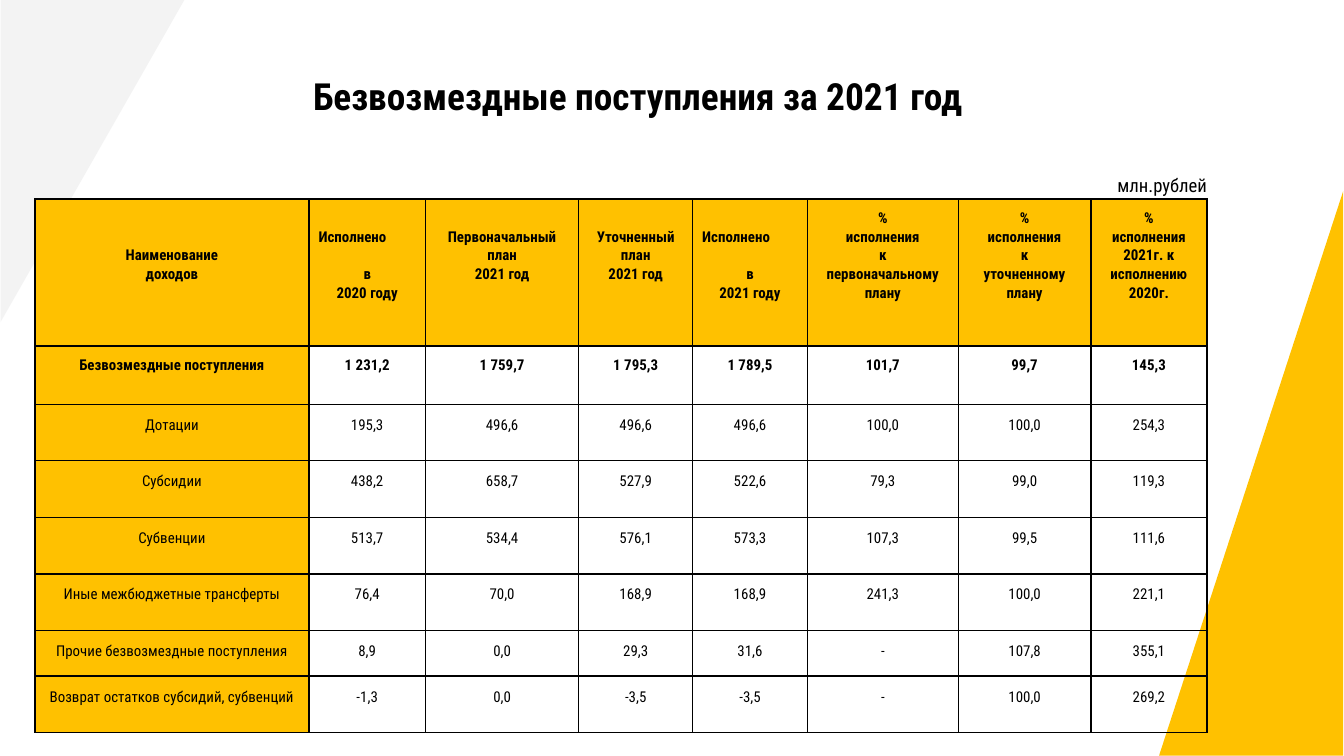
import lxml.etree
import pptx
import pptx.dml.color
import pptx.enum.shapes
import pptx.enum.text
import pptx.oxml.ns
import pptx.util

Cm = pptx.util.Cm
Pt = pptx.util.Pt
ALIGN = pptx.enum.text.PP_ALIGN
qn = pptx.oxml.ns.qn

COLOURS = {"text": "000000", "accent": "FFC100", "pale": "F3F3F3", "border": "000000"}
COLUMNS = [5.18, 2.2, 2.9, 2.15, 2.17, 2.85, 2.51, 2.19]
ROWS = [2.78, 1.1, 1.07, 1.07, 1.07, 1.07, 0.86, 1.07]
HEADER_LINE = 0.35
HEADERS = [
    (2, ["Наименование", "доходов"]),
    (1, ["Исполнено", "в", "2020 году"]),
    (1, ["Первоначальный", "план", "2021 год"]),
    (1, ["Уточненный", "план", "2021 год"]),
    (1, ["Исполнено", "в", "2021 году"]),
    (0, ["%", "исполнения", "к", "первоначальному плану"]),
    (0, ["%", "исполнения", "к", "уточненному", "плану"]),
    (0, ["%", "исполнения 2021г. к исполнению 2020г."]),
]
INCOME = [
    ["Безвозмездные поступления", "1 231,2", "1 759,7", "1 795,3", "1 789,5", "101,7", "99,7", "145,3"],
    ["Дотации", "195,3", "496,6", "496,6", "496,6", "100,0", "100,0", "254,3"],
    ["Субсидии", "438,2", "658,7", "527,9", "522,6", "79,3", "99,0", "119,3"],
    ["Субвенции", "513,7", "534,4", "576,1", "573,3", "107,3", "99,5", "111,6"],
    ["Иные межбюджетные трансферты", "76,4", "70,0", "168,9", "168,9", "241,3", "100,0", "221,1"],
    ["Прочие безвозмездные поступления", "8,9", "0,0", "29,3", "31,6", "-", "107,8", "355,1"],
    ["Возврат остатков субсидий, субвенций", "-1,3", "0,0", "-3,5", "-3,5", "-", "100,0", "269,2"],
]


class SlideBuilder:
    """Holds the slide style and adds each kind of element to the page."""

    font_name = "Roboto Condensed"

    def __init__(self, page):
        self.page = page

    def colour(self, name):
        return pptx.dml.color.RGBColor.from_string(COLOURS[name])

    def style(self, para, size, bold, align, spacing):
        para.alignment = align
        para.line_spacing = spacing
        para.font.name = self.font_name
        para.font.size = Pt(size)
        para.font.bold = bold
        para.font.color.rgb = self.colour("text")

    def triangle(self, left, top, width, height, rotation, colour):
        kind = pptx.enum.shapes.MSO_SHAPE.RIGHT_TRIANGLE
        shape = self.page.shapes.add_shape(kind, Cm(left), Cm(top), Cm(width), Cm(height))
        shape.rotation = rotation
        shape.shadow.inherit = False
        shape.fill.solid()
        shape.fill.fore_color.rgb = self.colour(colour)
        shape.line.fill.background()

    def text(self, left, top, width, height, words, size, bold, align, spacing, inset):
        box = self.page.shapes.add_textbox(Cm(left), Cm(top), Cm(width), Cm(height))
        frame = box.text_frame
        frame.word_wrap = True
        frame.margin_top = Cm(inset)
        para = frame.paragraphs[0]
        para.text = words
        self.style(para, size, bold, align, spacing)

    def borders(self, cell):
        properties = cell._tc.get_or_add_tcPr()
        for side in ("a:lnL", "a:lnR", "a:lnT", "a:lnB"):
            line = lxml.etree.SubElement(properties, qn(side), w=str(Pt(0.75)))
            fill = lxml.etree.SubElement(line, qn("a:solidFill"))
            lxml.etree.SubElement(fill, qn("a:srgbClr"), val=COLOURS["border"])

    def cell(self, cell, lines, bold, filled, spacing, skipped=0):
        cell.margin_left = cell.margin_right = cell.margin_bottom = Cm(0.18)
        cell.margin_top = Cm(0.18 + skipped * HEADER_LINE)
        self.borders(cell)
        if filled:
            cell.fill.solid()
            cell.fill.fore_color.rgb = self.colour("accent")
        else:
            cell.fill.background()
        cell.text_frame.text = "\n".join(lines)
        for para in cell.text_frame.paragraphs:
            align = ALIGN.LEFT if para.text == "Исполнено" else ALIGN.CENTER
            self.style(para, 8, bold, align, spacing)
            if para.text == "в":
                para.space_before = Pt(10)

    def table(self, left, top):
        frame = self.page.shapes.add_table(
            len(ROWS), len(COLUMNS), Cm(left), Cm(top), Cm(sum(COLUMNS)), Cm(sum(ROWS)))
        table = frame.table
        table.first_row = table.horz_banding = False
        for column, width in zip(table.columns, COLUMNS):
            column.width = Cm(width)
        for row, height in zip(table.rows, ROWS):
            row.height = Cm(height)
        for index, (skipped, lines) in enumerate(HEADERS):
            self.cell(table.cell(0, index), lines, True, True, 1.07, skipped)
        for number, values in enumerate(INCOME, 1):
            total = number == 1
            for index, value in enumerate(values):
                self.cell(table.cell(number, index), [value], total, index == 0,
                          1.07 if total else 1.15)


def main():
    deck = pptx.Presentation()
    deck.slide_width, deck.slide_height = Cm(25.4), Cm(14.29)
    builder = SlideBuilder(deck.slides.add_slide(deck.slide_layouts[6]))
    builder.triangle(-1.3, 1.3, 6.1, 3.48, 90, "pale")
    builder.triangle(18.31, 7.21, 10.67, 3.48, 270, "accent")
    builder.text(0.81, 1.09, 22.5, 1.6, "Безвозмездные поступления за 2021 год",
                 20, True, ALIGN.CENTER, 1, 0.3)
    builder.table(0.66, 3.76)
    builder.text(20.87, 2.97, 3.12, 1.02, "млн.рублей", 10, False, ALIGN.LEFT, 1.15, 0.25)
    deck.save("out.pptx")


if __name__ == "__main__":
    main()
